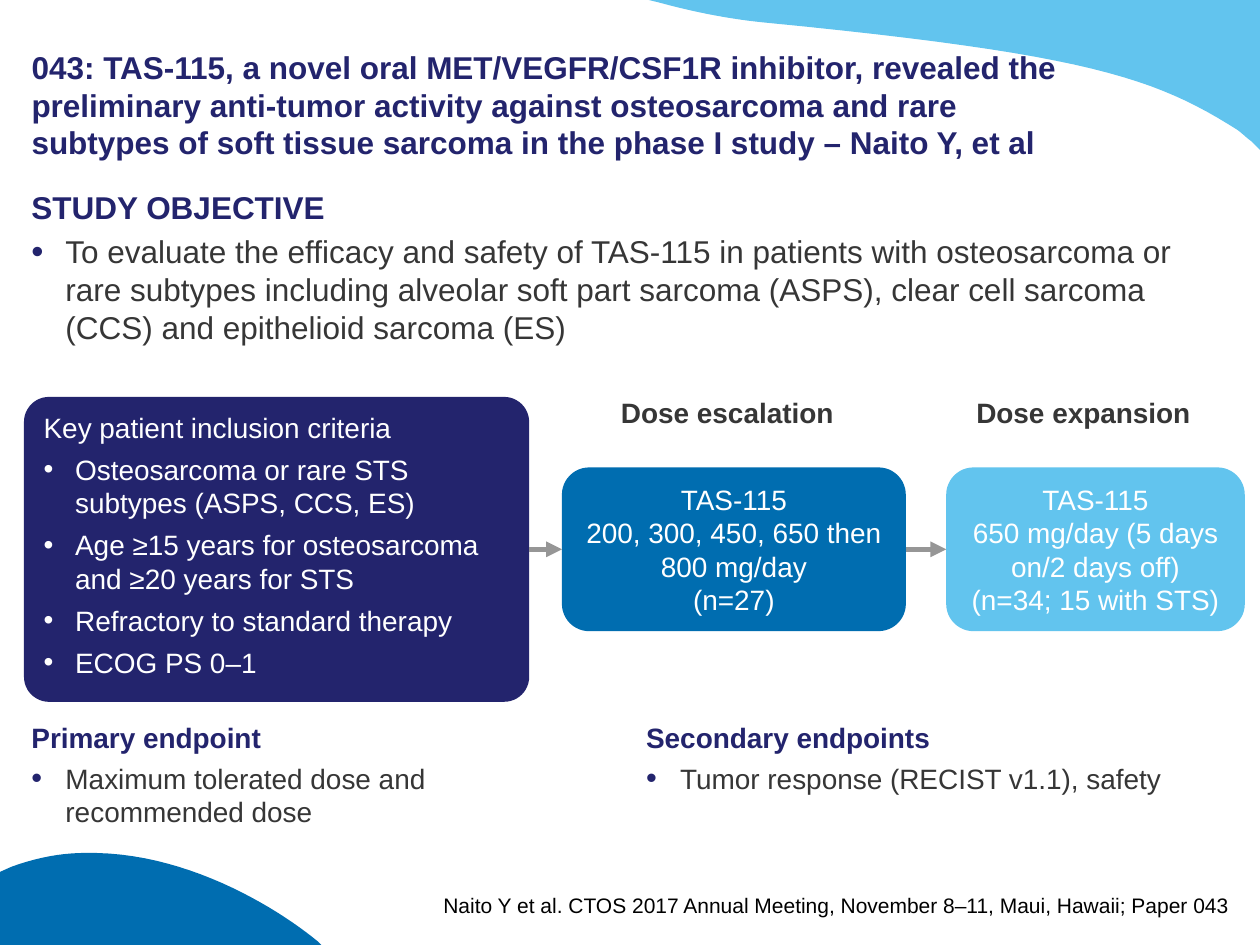
from lxml import etree
from pptx import Presentation
from pptx.dml.color import RGBColor
from pptx.enum import shapes, text
from pptx.oxml.ns import qn
from pptx.util import Inches, Pt

COLOURS = {
    "navy": "23246D",
    "blue": "006DB0",
    "sky": "62C4EE",
    "body": "363636",
    "arrow": "969696",
    "white": "FFFFFF",
    "black": "000000",
}
LEFT, CENTRE, RIGHT = text.PP_ALIGN.LEFT, text.PP_ALIGN.CENTER, text.PP_ALIGN.RIGHT
TOP, MIDDLE, BOTTOM = (text.MSO_ANCHOR.TOP, text.MSO_ANCHOR.MIDDLE,
                       text.MSO_ANCHOR.BOTTOM)
STANDARD_INSETS = (0.1, 0.05, 0.1, 0.05)
FLUSH_INSETS = (0, 0.05, 0, 0.05)
CURVE_STEPS = 24


def colour(name):
    return RGBColor.from_string(COLOURS[name])


def add_bullet(paragraph, indent, bullet_colour=None):
    """Give the paragraph a hanging bullet, optionally coloured and enlarged."""
    properties = paragraph._p.get_or_add_pPr()
    properties.set("marL", str(Inches(indent)))
    properties.set("indent", str(-Inches(indent)))
    if bullet_colour:
        holder = etree.SubElement(properties, qn("a:buClr"))
        etree.SubElement(holder, qn("a:srgbClr"), val=COLOURS[bullet_colour])
        etree.SubElement(properties, qn("a:buSzPct"), val="110000")
    etree.SubElement(properties, qn("a:buFont"), typeface="Arial")
    etree.SubElement(properties, qn("a:buChar"), char="•")


def set_frame(shape, insets=STANDARD_INSETS, anchor=TOP, wrap=True):
    left, top, right, bottom = map(Inches, insets)
    values = {"margin_left": left, "margin_top": top, "margin_right": right,
              "margin_bottom": bottom, "vertical_anchor": anchor,
              "word_wrap": wrap, "auto_size": text.MSO_AUTO_SIZE.NONE}
    for name, value in values.items():
        setattr(shape.text_frame, name, value)


def write(paragraph, words, size, ink, bold=False, align=LEFT, after=0):
    paragraph.text = words
    paragraph.alignment = align
    paragraph.space_after = Pt(after)
    for run in paragraph.runs:
        for name, value in {"name": "Arial", "size": Pt(size), "bold": bold}.items():
            setattr(run.font, name, value)
        run.font.color.rgb = colour(ink)


def add_text(slide, box, insets=STANDARD_INSETS, anchor=TOP, wrap=True):
    shape = slide.shapes.add_textbox(*map(Inches, box))
    set_frame(shape, insets, anchor, wrap)
    return shape.text_frame


def add_section(slide, box, heading, point, size, insets=FLUSH_INSETS):
    """Add a navy heading with one bulleted point below it."""
    frame = add_text(slide, box, insets)
    write(frame.paragraphs[0], heading, size, "navy", bold=True, after=4)
    paragraph = frame.add_paragraph()
    add_bullet(paragraph, 0.27, "navy")
    write(paragraph, point, size, "body", after=4)


def add_card(slide, box, fill, corner, **frame_options):
    shape = slide.shapes.add_shape(shapes.MSO_SHAPE.ROUNDED_RECTANGLE,
                                   *map(Inches, box))
    shape.adjustments[0] = corner
    shape.shadow.inherit = False
    shape.fill.solid()
    shape.fill.fore_color.rgb = colour(fill)
    shape.line.fill.background()
    set_frame(shape, **frame_options)
    return shape


def add_criteria(slide, box, heading, points):
    card = add_card(slide, box, "navy", 0.082)
    write(card.text_frame.paragraphs[0], heading, 16, "white", after=4.8)
    for point in points:
        paragraph = card.text_frame.add_paragraph()
        add_bullet(paragraph, 0.25)
        write(paragraph, point, 16, "white", after=4.8)
    return card


def add_dose(slide, box, fill, words):
    card = add_card(slide, box, fill, 0.167, insets=(0.1, 0, 0.1, 0), anchor=MIDDLE)
    write(card.text_frame.paragraphs[0], words, 16, "white", align=CENTRE)
    return card


def add_arrow(slide, start, end):
    """Join the right side of one card to the left side of the next."""
    arrow = slide.shapes.add_connector(shapes.MSO_CONNECTOR.STRAIGHT, 0, 0, 0, 0)
    arrow.begin_connect(start, 3)
    arrow.end_connect(end, 1)
    arrow.line.color.rgb = colour("arrow")
    arrow.line.width = Pt(3)
    etree.SubElement(arrow.line._get_or_add_ln(), qn("a:tailEnd"), type="triangle")
    etree.SubElement(arrow._element.spPr, qn("a:effectLst"))


def curve_points(start, *controls):
    """Points along a cubic Bezier curve, without its start."""
    points = []
    for step in range(1, CURVE_STEPS + 1):
        t = step / CURVE_STEPS
        weights = ((1 - t) ** 3, 3 * t * (1 - t) ** 2, 3 * t ** 2 * (1 - t), t ** 3)
        points.append(tuple(sum(weight * point[axis] for weight, point
                                in zip(weights, (start, *controls)))
                            for axis in (0, 1)))
    return points


def add_wave(slide, fill, start, segments):
    """Draw a filled outline; a segment is one end point or three curve points."""
    points = [start]
    for segment in segments:
        points += segment if len(segment) == 1 else curve_points(points[-1], *segment)
    builder = slide.shapes.build_freeform(*map(Inches, start), scale=1.0)
    builder.add_line_segments([tuple(map(Inches, point)) for point in points[1:]])
    wave = builder.convert_to_shape()
    wave.shadow.inherit = False
    wave.fill.solid()
    wave.fill.fore_color.rgb = colour(fill)
    wave.line.fill.background()


def add_title(slide, box, words):
    title = slide.shapes.title
    for name, value in zip(("left", "top", "width", "height"), box):
        setattr(title, name, Inches(value))
    set_frame(title, (0, 0.05, 0, 0), BOTTOM)
    paragraph = title.text_frame.paragraphs[0]
    write(paragraph, words, 18, "navy", bold=True)
    paragraph.space_before = Pt(0)


def main():
    presentation = Presentation()
    presentation.slide_width, presentation.slide_height = Inches(10), Inches(7.5)
    slide = presentation.slides.add_slide(presentation.slide_layouts[5])

    add_wave(slide, "sky", (5.15, 0), [
        [(10, 0)], [(10, 1.19)], [(9.93, 1.12)],
        [(9.89, 1.09), (9.86, 1.06), (9.82, 1.03)],
        [(9.17, 0.62), (8.64, 0.43), (6.08, 0.18)],
        [(5.77, 0.15), (5.49, 0.09), (5.23, 0.02)]])
    add_wave(slide, "blue", (0.67, 6.77), [
        [(1.45, 6.75), (2.18, 7.19), (2.52, 7.47)],
        [(2.55, 7.5)], [(0, 7.5)], [(0, 6.92)], [(0.09, 6.88)],
        [(0.28, 6.81), (0.48, 6.77), (0.67, 6.77)]])

    add_title(slide, (0.25, 0.25, 8.17, 1.03),
              "043: TAS-115, a novel oral MET/VEGFR/CSF1R inhibitor, revealed the "
              "preliminary anti-tumor activity against osteosarcoma and rare subtypes "
              "of soft tissue sarcoma in the phase I study – Naito Y, et al")
    add_section(slide, (0.25, 1.44, 9.5, 5.81), "STUDY OBJECTIVE",
                "To evaluate the efficacy and safety of TAS-115 in patients with "
                "osteosarcoma or rare subtypes including alveolar soft part sarcoma "
                "(ASPS), clear cell sarcoma (CCS) and epithelioid sarcoma (ES)", 18)
    add_section(slide, (0.25, 5.67, 4.74, 0.77), "Primary endpoint",
                "Maximum tolerated dose and\nrecommended dose", 16)
    add_section(slide, (5.03, 5.67, 4.67, 0.92), "Secondary endpoints",
                "Tumor response (RECIST v1.1), safety", 16, STANDARD_INSETS)

    criteria = add_criteria(slide, (0.19, 3.15, 4.01, 2.42),
                            "Key patient inclusion criteria",
                            ["Osteosarcoma or rare STS subtypes (ASPS, CCS, ES)",
                             "Age ≥15 years for osteosarcoma and ≥20 years for STS",
                             "Refractory to standard therapy",
                             "ECOG PS 0–1"])
    escalation = add_dose(slide, (4.46, 3.71, 2.73, 1.3), "blue",
                          "TAS-115\n200, 300, 450, 650 then 800 mg/day\n(n=27)")
    expansion = add_dose(slide, (7.51, 3.71, 2.37, 1.3), "sky",
                         "TAS-115\n650 mg/day (5 days on/2 days off)\n"
                         "(n=34; 15 with STS)")
    add_arrow(slide, criteria, escalation)
    add_arrow(slide, escalation, expansion)

    for left, label in ((4.83, "Dose escalation"), (7.65, "Dose expansion")):
        frame = add_text(slide, (left, 3.09, 1.92, 0.37), wrap=False)
        write(frame.paragraphs[0], label, 16, "body", bold=True)

    citation = add_text(slide, (3.47, 7.08, 6.29, 0.2), (0, 0, 0, 0), BOTTOM, False)
    write(citation.paragraphs[0],
          "Naito Y et al. CTOS 2017 Annual Meeting, November 8–11, Maui, Hawaii; "
          "Paper 043", 12, "black", align=RIGHT)
    presentation.save("out.pptx")


if __name__ == "__main__":
    main()
